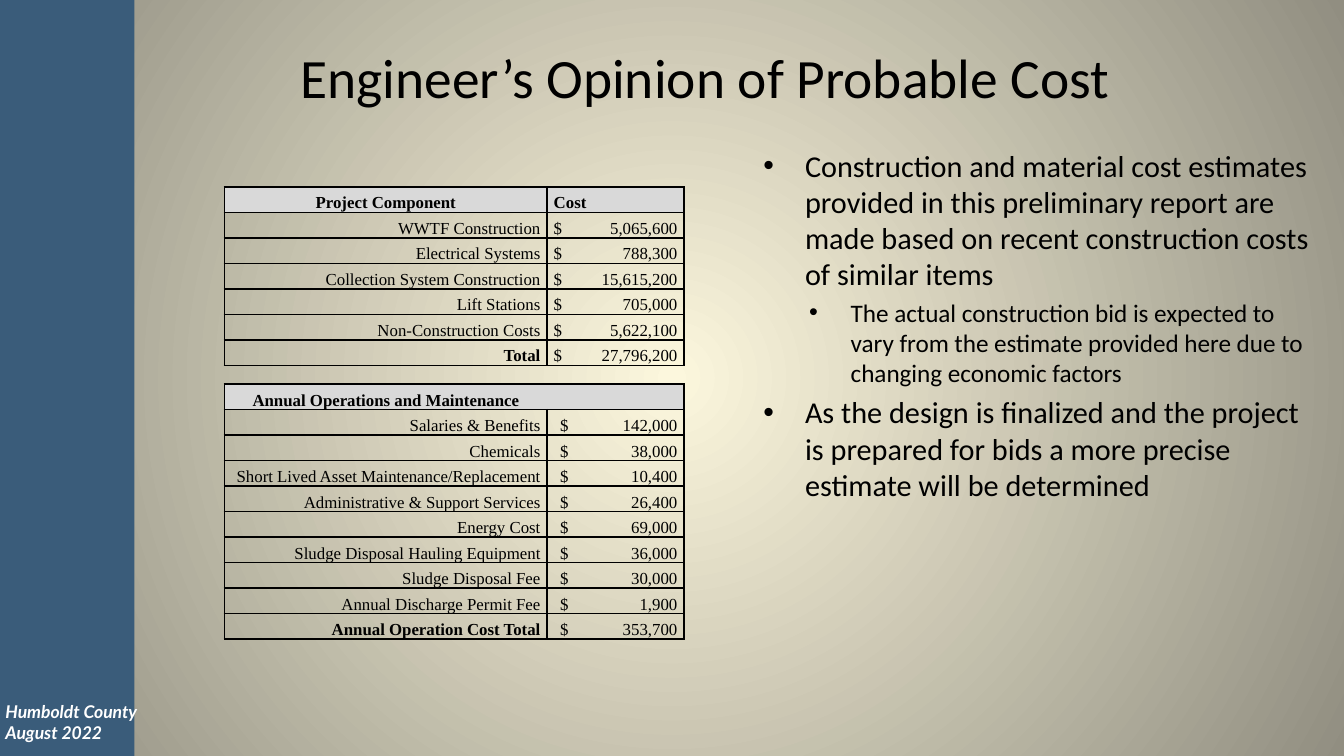
from dataclasses import dataclass

from lxml.etree import SubElement
from pptx import Presentation
from pptx.dml.color import RGBColor
from pptx.enum.shapes import MSO_SHAPE
from pptx.enum.text import MSO_ANCHOR, MSO_AUTO_SIZE, PP_ALIGN
from pptx.oxml.ns import qn
from pptx.util import Inches, Pt


@dataclass(frozen=True)
class Theme:
    ink: str = "000000"
    light: str = "FFFFFF"
    band: str = "3A5C7A"
    header: str = "D9D9D9"
    glow: str = "FCF7DD"
    edge: str = "918E81"
    text_font: str = "Calibri"
    table_font: str = "Times New Roman"
    footer_font: str = "Lato"
    title_size: float = 29.7
    body_sizes: tuple = (16.2, 13.5)
    table_size: float = 9
    footer_size: float = 9.4


THEME = Theme()
WIDTH = 10
HEIGHT = WIDTH * 9 / 16
NO_STYLE = "{2D5ABB26-0587-4C30-8999-92F81FD0307C}"
COLUMNS = (2.4, 0.21, 0.09, 0.72)
ROW, GAP_ROW = 0.19, 0.14

PROJECT_COSTS = [
    ("WWTF Construction", "5,065,600"),
    ("Electrical Systems", "788,300"),
    ("Collection System Construction", "15,615,200"),
    ("Lift Stations", "705,000"),
    ("Non-Construction Costs", "5,622,100"),
    ("Total", "27,796,200"),
]
ANNUAL_COSTS = [
    ("Salaries & Benefits", "142,000"),
    ("Chemicals", "38,000"),
    ("Short Lived Asset Maintenance/Replacement", "10,400"),
    ("Administrative & Support Services", "26,400"),
    ("Energy Cost", "69,000"),
    ("Sludge Disposal Hauling Equipment", "36,000"),
    ("Sludge Disposal Fee", "30,000"),
    ("Annual Discharge Permit Fee", "1,900"),
    ("Annual Operation Cost Total", "353,700"),
]
POINTS = [
    (0, "Construction and material cost estimates provided in this preliminary "
        "report are made based on recent construction costs of similar items"),
    (1, "The actual construction bid is expected to vary from the estimate "
        "provided here due to changing economic factors"),
    (0, "As the design is finalized and the project is prepared for bids a more "
        "precise estimate will be determined"),
]
INDENTS = (0.31, 0.65)
HANG = 0.31


def style(para, font, size, color=THEME.ink, bold=False, italic=False):
    for span in para.runs:
        span.font.name, span.font.size = font, Pt(size)
        span.font.bold, span.font.italic = bold, italic
        span.font.color.rgb = RGBColor.from_string(color)


def place(shape, box):
    shape.left, shape.top, shape.width, shape.height = map(Inches, box)


def paint_background(page):
    fill = page.background.fill
    fill.gradient()
    for stop, color in zip(fill.gradient_stops, (THEME.glow, THEME.edge)):
        stop.color.rgb = RGBColor.from_string(color)
    gradient = page.element.find(".//" + qn("a:gradFill"))
    gradient.remove(gradient.find(qn("a:lin")))
    circle = SubElement(gradient, qn("a:path"), {"path": "circle"})
    SubElement(circle, qn("a:fillToRect"), dict.fromkeys("ltrb", "50000"))


def add_side_band(page, box):
    left, top, width, height = box
    band = page.shapes.add_shape(MSO_SHAPE.RECTANGLE, *map(Inches, box))
    band.shadow.inherit = False
    band.fill.solid()
    band.fill.fore_color.rgb = RGBColor.from_string(THEME.band)
    band.line.fill.background()

    # Place and date at the foot of the band
    label_box = (left + 0.04, top + height - 0.46, width * 1.12, 0.35)
    label = page.shapes.add_textbox(*map(Inches, label_box))
    frame = label.text_frame
    frame.word_wrap = True
    frame.margin_left = 0
    frame.text = "Humboldt County\nAugust 2022"
    for para in frame.paragraphs:
        style(para, THEME.footer_font, THEME.footer_size, THEME.light, True, True)


def fill_title(page, box):
    title = page.shapes.title
    place(title, box)
    frame = title.text_frame
    frame.text = "Engineer’s Opinion of Probable Cost"
    frame.auto_size = MSO_AUTO_SIZE.NONE
    frame.vertical_anchor = MSO_ANCHOR.MIDDLE
    frame.paragraphs[0].alignment = PP_ALIGN.CENTER
    style(frame.paragraphs[0], THEME.text_font, THEME.title_size)


def fill_points(page, box):
    body = page.placeholders[1]
    place(body, box)
    frame = body.text_frame
    frame.text = "\n".join(text for _, text in POINTS)
    frame.auto_size = MSO_AUTO_SIZE.NONE
    frame.vertical_anchor = MSO_ANCHOR.BOTTOM
    for para, (level, _) in zip(frame.paragraphs, POINTS):
        para.level = level
        props = para._p.get_or_add_pPr()
        props.set("marL", str(Inches(INDENTS[level])))
        props.set("indent", str(-Inches(HANG)))
        SubElement(props, qn("a:buChar"), {"char": "•"})
        style(para, THEME.text_font, THEME.body_sizes[level])
    frame.paragraphs[0].space_before = Pt(0)


def format_cell(cell, sides, header=False):
    cell.margin_left = cell.margin_right = Inches(0.05)
    cell.margin_top = cell.margin_bottom = 0
    cell.vertical_anchor = MSO_ANCHOR.BOTTOM
    for side in "LRTB":
        line = SubElement(cell._tc.get_or_add_tcPr(), qn(f"a:ln{side}"), {"w": str(Pt(1))})
        if side in sides:
            SubElement(SubElement(line, qn("a:solidFill")), qn("a:srgbClr"), {"val": THEME.ink})
        else:
            SubElement(line, qn("a:noFill"))
    if header:
        cell.fill.solid()
        cell.fill.fore_color.rgb = RGBColor.from_string(THEME.header)
    else:
        cell.fill.background()
    # Keeps empty cells from stretching their row
    if not cell.text_frame.text:
        SubElement(cell.text_frame.paragraphs[0]._p, qn("a:endParaRPr"), {"sz": "800"})


def write_cell(cell, text, align, bold=False):
    cell.text_frame.text = text
    para = cell.text_frame.paragraphs[0]
    para.alignment = align
    style(para, THEME.table_font, THEME.table_size, bold=bold)


def write_costs(table, first_row, costs, amount_column, sign_align):
    merge_start = 1 if amount_column == 3 else 2
    for row, (name, amount) in enumerate(costs, first_row):
        table.cell(row, merge_start).merge(table.cell(row, merge_start + 1))
        write_cell(table.cell(row, 0), name, PP_ALIGN.RIGHT, "Total" in name)
        write_cell(table.cell(row, 1), "$", sign_align)
        write_cell(table.cell(row, amount_column), amount, PP_ALIGN.RIGHT)


def add_cost_table(page, left, top):
    gap = len(PROJECT_COSTS) + 1
    annual = gap + 1
    count = annual + 1 + len(ANNUAL_COSTS)
    heights = [GAP_ROW if row == gap else ROW for row in range(count)]
    frame = page.shapes.add_table(count, len(COLUMNS), Inches(left), Inches(top),
                                  Inches(sum(COLUMNS)), Inches(sum(heights)))
    table = frame.table
    table.first_row = table.horz_banding = False
    table._tbl.tblPr.find(qn("a:tableStyleId")).text = NO_STYLE
    for column, width in zip(table.columns, COLUMNS):
        column.width = Inches(width)
    for row, height in zip(table.rows, heights):
        row.height = Inches(height)

    # Wording
    for row in (0, annual):
        table.cell(row, 1).merge(table.cell(row, 3))
    table.cell(gap, 0).merge(table.cell(gap, 3))
    write_cell(table.cell(0, 0), "Project Component", PP_ALIGN.CENTER, True)
    write_cell(table.cell(0, 1), "Cost", PP_ALIGN.LEFT, True)
    write_cell(table.cell(annual, 0), "Annual Operations and Maintenance", PP_ALIGN.CENTER, True)
    write_costs(table, 1, PROJECT_COSTS, 3, PP_ALIGN.LEFT)
    write_costs(table, annual + 1, ANNUAL_COSTS, 2, PP_ALIGN.RIGHT)

    # Borders: none between sign and amount, none beside the gap row
    for row in range(count):
        for column in range(len(COLUMNS)):
            cell = table.cell(row, column)
            end = column + (cell.span_width if cell.is_merge_origin else 1)
            left_line = column == 0 or (column == 1 and row != annual)
            right_line = end == len(COLUMNS) or (end == 1 and row != annual)
            sides = "L" * left_line + "R" * right_line if row != gap else ""
            format_cell(cell, sides + "TB", row in (0, annual))


def main():
    deck = Presentation()
    deck.slide_width, deck.slide_height = Inches(WIDTH), Inches(HEIGHT)
    page = deck.slides.add_slide(deck.slide_layouts[1])
    paint_background(page)
    add_side_band(page, (0, 0, WIDTH * 0.1, HEIGHT))
    fill_title(page, (1, 0.1, WIDTH * 0.85, 0.94))
    add_cost_table(page, 1.67, 1.39)
    fill_points(page, (5.58, 1.04, 4.33, 2.75))
    deck.save("out.pptx")


if __name__ == "__main__":
    main()
